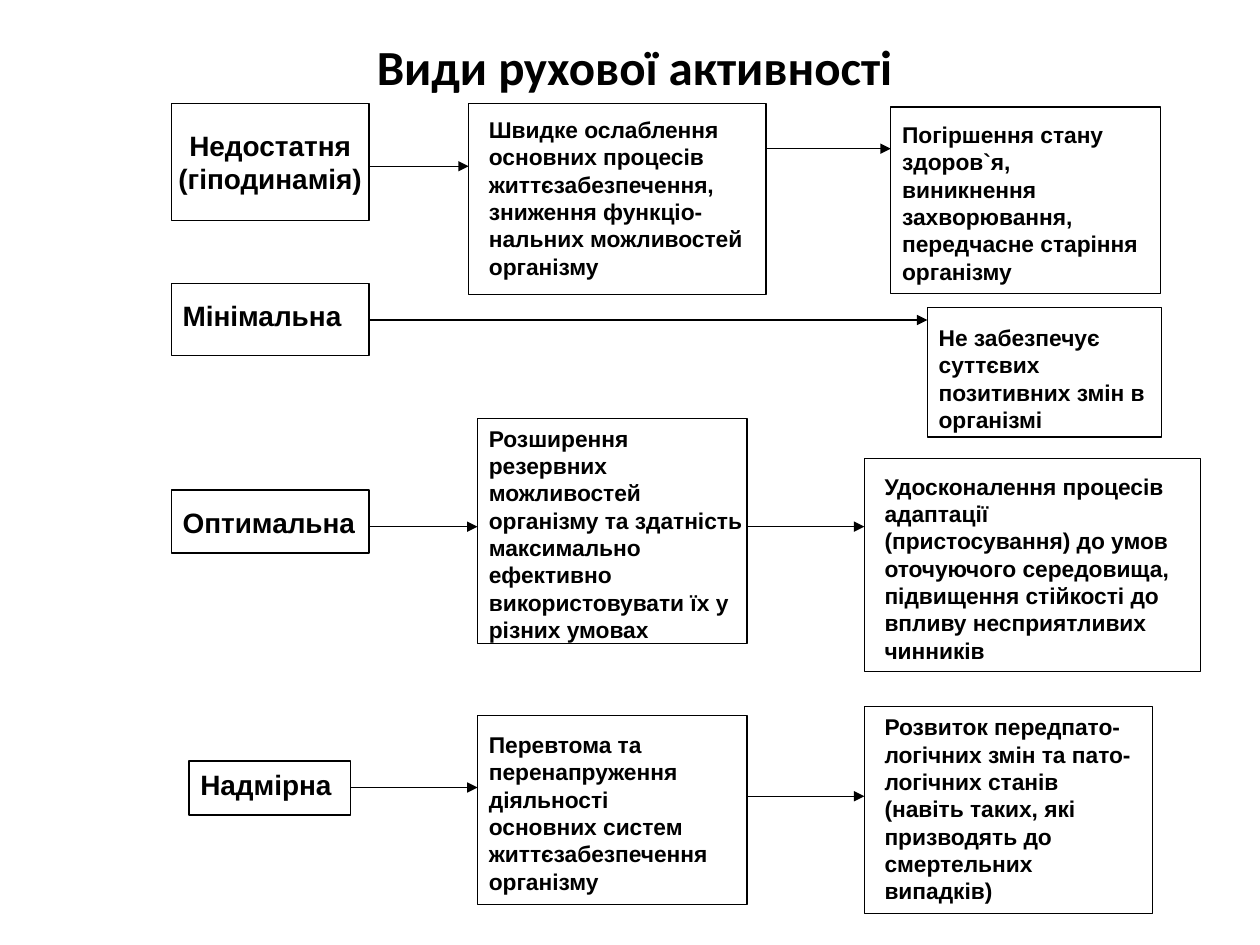
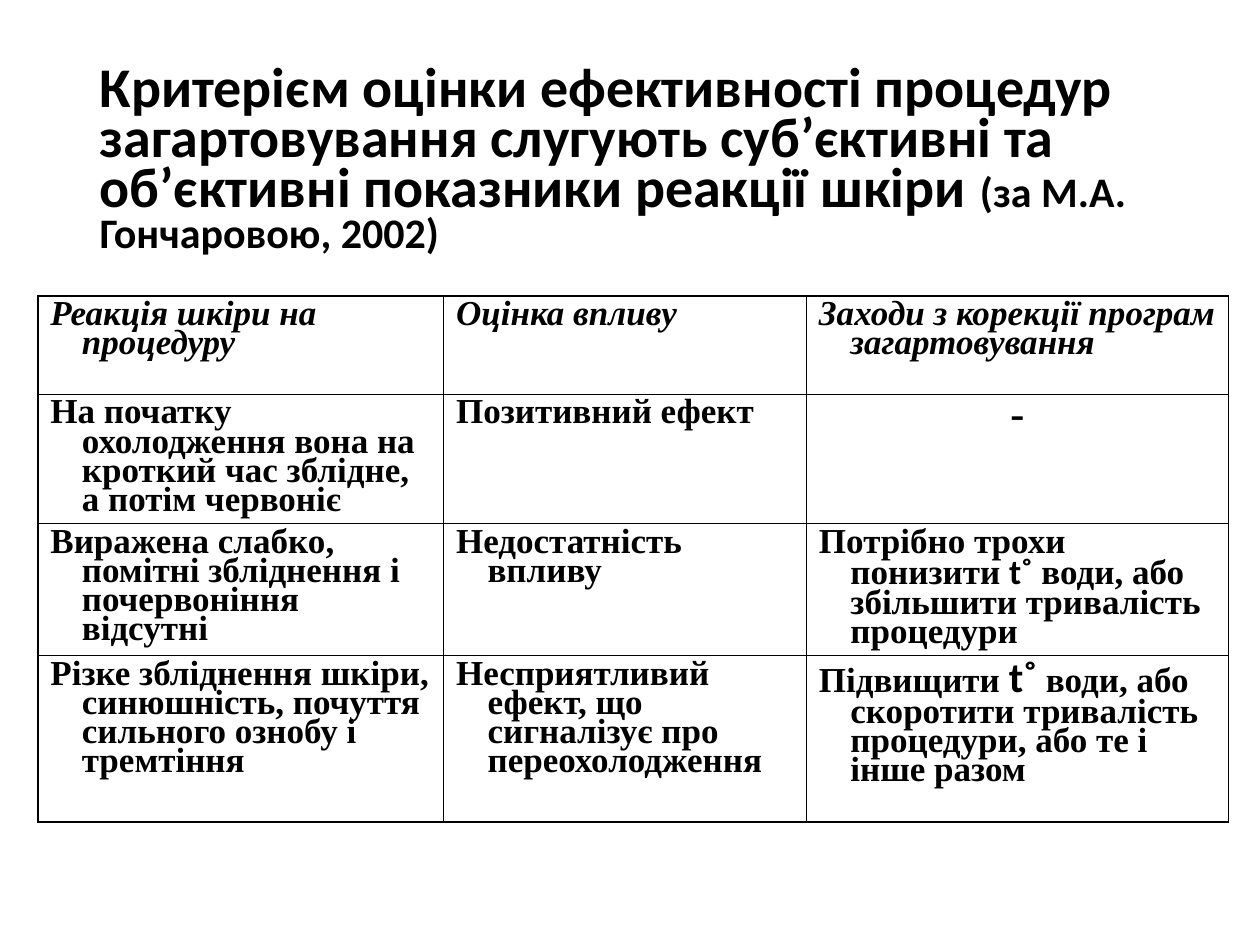
from dataclasses import dataclass

from lxml import etree
from pptx import Presentation
from pptx import util as u
from pptx.dml import color
from pptx.enum import shapes, text
from pptx.oxml import ns, xmlchemy

PX = 9144


@dataclass(frozen=True)
class Style:
    font: str
    size: int
    italic: bool = False


@dataclass(frozen=True)
class Theme:
    ink: color.RGBColor = color.RGBColor(0, 0, 0)
    paper: color.RGBColor = color.RGBColor(255, 255, 255)
    title: Style = Style("Calibri", 28)
    long_title: Style = Style("Calibri", 32)
    citation: Style = Style("Calibri", 24)
    kind: Style = Style("Arial", 16)
    effect: Style = Style("Arial", 13)
    heading: Style = Style("Times New Roman", 20, True)
    cell: Style = Style("Times New Roman", 20)
    dash: Style = Style("Times New Roman", 24)
    degree: Style = Style("Calibri", 20)
    big_degree: Style = Style("Calibri", 24)
    line: float = 0.75
    border: float = 1


THEME = Theme()


@dataclass(frozen=True)
class Card:
    frame: tuple
    words: str
    style: Style = THEME.effect
    label: tuple = None


@dataclass(frozen=True)
class Lane:
    top: int
    cards: tuple
    arrows: tuple


LANES = (
    Lane(82, (
        Card((136, 0, 157, 93), "Недостатня\n(гіподинамія)", THEME.kind),
        Card((372, 0, 236, 152),
             "Швидке ослаблення основних процесів життєзабезпечення, "
             "зниження функціо-нальних можливостей організму",
             label=(7, 5, 228, 139)),
        Card((707, 3, 214, 148),
             "Погіршення стану здоров`я, виникнення захворювання, "
             "передчасне старіння організму",
             label=(0, 6, 214, 139)),
    ), (50, 36)),
    Lane(225, (
        Card((136, 0, 157, 57), "Мінімальна", THEME.kind, (0, 7, 164, 36)),
        Card((736, 19, 186, 103),
             "Не забезпечує суттєвих позитивних змін в організмі",
             label=(0, 8, 186, 96)),
    ), (29,)),
    Lane(332, (
        Card((136, 57, 157, 50), "Оптимальна", THEME.kind, (0, 7, 164, 36)),
        Card((379, 0, 214, 179),
             "Розширення резервних можливостей організму та здатність "
             "максимально ефективно використовувати їх у різних умовах",
             label=(0, 0, 223, 183)),
        Card((686, 32, 267, 169),
             "Удосконалення процесів адаптації (пристосування) до умов "
             "оточуючого середовища, підвищення стійкості до впливу "
             "несприятливих чинників",
             label=(7, 6, 251, 161)),
    ), (86, 86)),
    Lane(561, (
        Card((150, 43, 128, 43), "Надмірна", THEME.kind, (0, 0, 143, 36)),
        Card((379, 7, 214, 150),
             "Перевтома та перенапруження діяльності основних систем "
             "життєзабезпечення організму",
             label=(0, 7, 193, 136)),
        Card((686, 0, 229, 164),
             "Розвиток передпато-логічних змін та пато-логічних станів "
             "(навіть таких, які призводять до смертельних випадків)",
             label=(7, 0, 222, 136)),
    ), (64, 71)),
)

HEADINGS = ("Реакція шкіри на процедуру", "Оцінка впливу",
            "Заходи з корекції програм загартовування")
REACTIONS = (
    ("На початку охолодження вона на кроткий час зблідне, а потім червоніє",
     "Позитивний ефект",
     (("-", THEME.dash),)),
    ("Виражена слабко, помітні збліднення і почервоніння відсутні",
     "Недостатність впливу",
     (("Потрібно трохи понизити ", THEME.cell), ("t˚", THEME.degree),
      (" води, або збільшити тривалість процедури", THEME.cell))),
    ("Різке збліднення шкіри, синюшність, почуття сильного ознобу і тремтіння",
     "Несприятливий ефект, що сигналізує про переохолодження",
     (("Підвищити ", THEME.cell), ("t˚", THEME.big_degree),
      (" води, або скоротити тривалість процедури, або те і інше разом",
       THEME.cell))),
)


def emu(*lengths):
    return [u.Emu(length * PX) for length in lengths]


def format_font(font, style):
    font.name = style.font
    font.size = u.Pt(style.size)
    font.bold = True
    font.italic = style.italic
    font.color.rgb = THEME.ink


def write_spans(para, spans):
    for words, style in spans:
        span = para.add_run()
        span.text = words
        format_font(span.font, style)


def write_words(box, words, style):
    frame = box.text_frame
    frame.margin_left, frame.margin_right = emu(9, 9)
    frame.margin_top, frame.margin_bottom = emu(5, 5)
    frame.text = words
    for para in frame.paragraphs:
        for span in para.runs:
            format_font(span.font, style)
    return frame


def add_title(page, box, spans, align, spacing, anchor):
    title = page.shapes.title
    title.left, title.top, title.width, title.height = emu(*box)
    frame = title.text_frame
    frame.word_wrap = True
    frame.auto_size = text.MSO_AUTO_SIZE.NONE
    frame.vertical_anchor = anchor
    para = frame.paragraphs[0]
    para.alignment = align
    para.line_spacing = spacing
    write_spans(para, spans)


def add_card(page, top, card):
    left, drop, width, height = card.frame
    box = page.shapes.add_shape(shapes.MSO_SHAPE.RECTANGLE,
                                *emu(left, top + drop, width, height))
    box.shadow.inherit = False
    box.fill.solid()
    box.fill.fore_color.rgb = THEME.paper
    box.line.color.rgb = THEME.ink
    box.line.width = u.Pt(THEME.line)
    if card.label:
        dx, dy, width, height = card.label
        label = page.shapes.add_textbox(
            *emu(left + dx, top + drop + dy, width, height))
        frame = write_words(label, card.words, card.style)
        frame.word_wrap = True
        frame.auto_size = text.MSO_AUTO_SIZE.SHAPE_TO_FIT_TEXT
    else:
        frame = write_words(box, card.words, card.style)
        frame.word_wrap = False
        frame.vertical_anchor = text.MSO_ANCHOR.MIDDLE
        for para in frame.paragraphs:
            para.alignment = text.PP_ALIGN.CENTER


def add_arrow(page, start, end, y):
    arrow = page.shapes.add_connector(shapes.MSO_CONNECTOR.STRAIGHT,
                                      *emu(start, y, end, y))
    arrow.line.color.rgb = THEME.ink
    arrow.line.width = u.Pt(THEME.line)
    properties = arrow.line._get_or_add_ln()
    etree.SubElement(properties, ns.qn("a:tailEnd"), type="triangle")
    etree.SubElement(properties.getparent(), ns.qn("a:effectLst"))


def add_lane(page, lane):
    for card in lane.cards:
        add_card(page, lane.top, card)
    for source, target, drop in zip(lane.cards, lane.cards[1:], lane.arrows):
        left, _, width, _ = source.frame
        add_arrow(page, left + width, target.frame[0], lane.top + drop)


def border_cell(cell):
    properties = cell._tc.get_or_add_tcPr()
    for position, side in enumerate(("lnL", "lnR", "lnT", "lnB")):
        edge = xmlchemy.OxmlElement(f"a:{side}")
        edge.set("w", str(u.Pt(THEME.border)))
        fill = etree.SubElement(edge, ns.qn("a:solidFill"))
        etree.SubElement(fill, ns.qn("a:srgbClr"), val=str(THEME.ink))
        properties.insert(position, edge)


def fill_cell(cell, content, style):
    spans = ((content, style),) if isinstance(content, str) else content
    para = cell.text_frame.paragraphs[0]
    indent = 25 * PX
    properties = para._p.get_or_add_pPr()
    properties.set("marL", str(indent))
    properties.set("indent", str(-indent))
    para.line_spacing = 0.75
    if spans[0][1] == THEME.dash:
        para.alignment = text.PP_ALIGN.CENTER
    write_spans(para, spans)
    cell.fill.background()
    border_cell(cell)


def add_reaction_table(page, box, widths, heights):
    rows = (HEADINGS, *REACTIONS)
    table = page.shapes.add_table(len(rows), len(HEADINGS), *emu(*box)).table
    table.first_row = False
    table.horz_banding = False
    for column, width in zip(table.columns, emu(*widths)):
        column.width = width
    for row, height in zip(table.rows, emu(*heights)):
        row.height = height
    for row, contents in zip(table.rows, rows):
        style = THEME.heading if contents is HEADINGS else THEME.cell
        for cell, content in zip(row.cells, contents):
            fill_cell(cell, content, style)


def add_page(deck):
    page = deck.slides.add_slide(deck.slide_layouts[5])
    page.background.fill.solid()
    page.background.fill.fore_color.rgb = THEME.paper
    return page


def build_activity_page(deck):
    page = add_page(deck)
    add_title(page, (50, 0, 907, 81),
              (("Види рухової активності", THEME.title),),
              text.PP_ALIGN.CENTER, 0.9, text.MSO_ANCHOR.BOTTOM)
    for lane in LANES:
        add_lane(page, lane)


def build_hardening_page(deck):
    page = add_page(deck)
    add_title(page, (69, 40, 862, 176),
              (("Критерієм оцінки ефективності процедур загартовування "
                "слугують суб’єктивні та об’єктивні показники реакції шкіри ",
                THEME.long_title),
               ("(за М.А. Гончаровою, 2002)", THEME.citation)),
              text.PP_ALIGN.LEFT, 0.75, text.MSO_ANCHOR.MIDDLE)
    add_reaction_table(page, (30, 235, 945, 436),
                       (322, 288, 335), (78, 102, 101, 132))


def main():
    deck = Presentation()
    deck.slide_width, deck.slide_height = emu(1000, 750)
    build_activity_page(deck)
    build_hardening_page(deck)
    deck.save("out.pptx")


if __name__ == "__main__":
    main()
